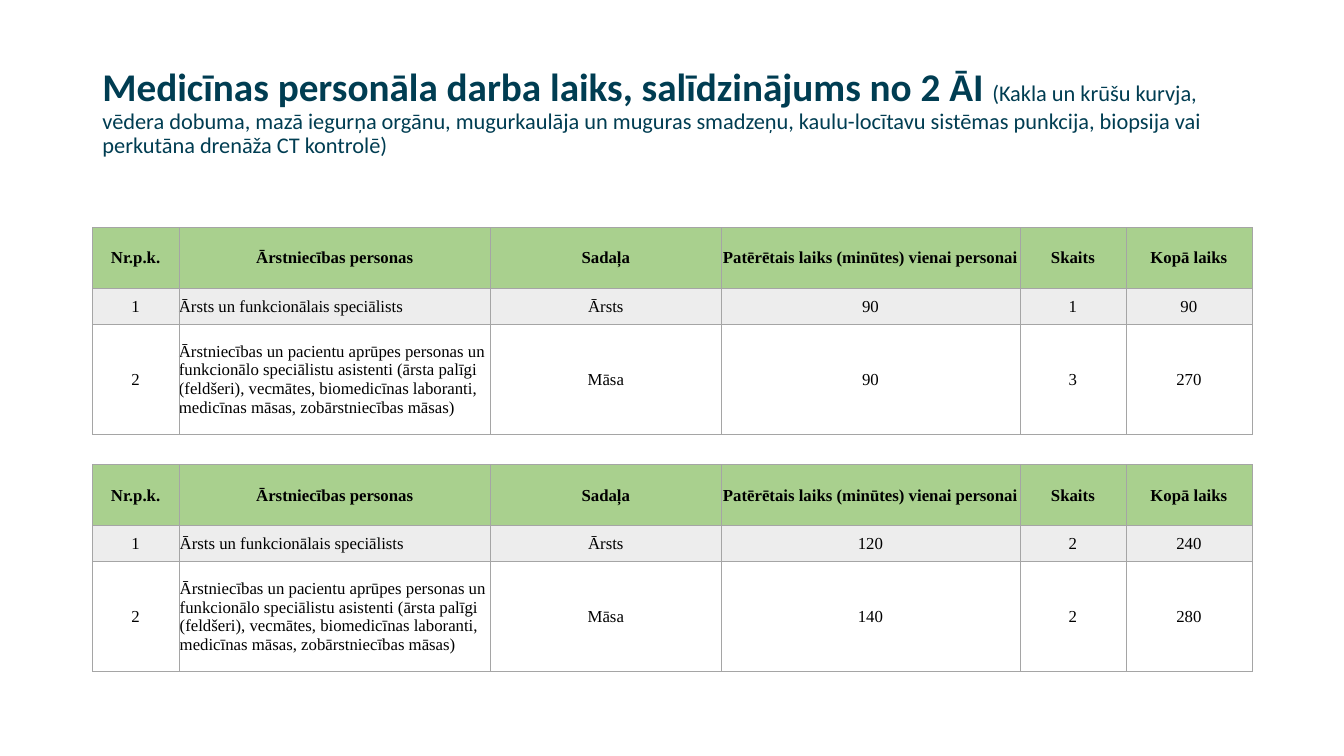
from lxml.etree import SubElement
from pptx import Presentation
from pptx.dml.color import RGBColor
from pptx.enum.text import MSO_ANCHOR as Anchor, PP_ALIGN as Align
from pptx.oxml.ns import qn
from pptx.util import Pt

NAVY = RGBColor(0x00, 0x3D, 0x52)
BLACK = RGBColor(0x00, 0x00, 0x00)
GREEN = RGBColor(0xA9, 0xD0, 0x8E)
LIGHT_GRAY = RGBColor(0xED, 0xED, 0xED)
BORDER_GRAY = RGBColor(0xA5, 0xA5, 0xA5)

HEADING = "Medicīnas personāla darba laiks, salīdzinājums no 2 ĀI "
PROCEDURE = (
    "(Kakla un krūšu kurvja, vēdera dobuma, mazā iegurņa orgānu, "
    "mugurkaulāja un muguras smadzeņu, kaulu-locītavu sistēmas punkcija, "
    "biopsija vai perkutāna drenāža CT kontrolē)"
)
COLUMNS = [
    ("Nr.p.k.", 61.8),
    ("Ārstniecības personas", 222.8),
    ("Sadaļa", 164.4),
    ("Patērētais laiks (minūtes) vienai personai", 213.6),
    ("Skaits", 75.7),
    ("Kopā laiks", 90),
]
STAFF = [
    ("Ārsts un funkcionālais speciālists", "Ārsts"),
    ("Ārstniecības un pacientu aprūpes personas un funkcionālo speciālistu "
     "asistenti (ārsta palīgi (feldšeri), vecmātes, biomedicīnas laboranti, "
     "medicīnas māsas, zobārstniecības māsas)", "Māsa"),
]
# (minutes per person, number of persons) for each staff group
INSTITUTIONS = [
    {"work": [(90, 1), (90, 3)], "inset": 0},
    {"work": [(120, 2), (140, 2)], "inset": 0.6},
]

LEFT, WIDTH = 66, 828
TABLES_TOP, TABLE_STEP = 162.4, 169.3
ROW_HEIGHTS = [43.7, 25.7, 78.6]
ROW_FILLS = [GREEN, LIGHT_GRAY, None]
PERSONS_COLUMN = 1


def style_run(run, font, size, color, bold):
    run.font.name = font
    run.font.size = Pt(size)
    run.font.color.rgb = color
    run.font.bold = bold


def add_borders(cell):
    properties = cell._tc.get_or_add_tcPr()
    for side in ("a:lnL", "a:lnR", "a:lnT", "a:lnB"):
        line = SubElement(properties, qn(side), w=str(Pt(0.5)))
        fill = SubElement(line, qn("a:solidFill"))
        SubElement(fill, qn("a:srgbClr"), val=str(BORDER_GRAY))


def fill_cell(cell, text, fill, inset, bold, align):
    add_borders(cell)
    if fill is None:
        cell.fill.background()
    else:
        cell.fill.solid()
        cell.fill.fore_color.rgb = fill
    cell.margin_left = cell.margin_right = cell.margin_top = Pt(inset)
    cell.margin_bottom = 0
    cell.vertical_anchor = Anchor.MIDDLE
    cell.text_frame.text = text
    paragraph = cell.text_frame.paragraphs[0]
    paragraph.alignment = align
    style_run(paragraph.runs[0], "Times New Roman", 12, BLACK, bold)


def add_work_table(slide, top, work, inset):
    rows = [[label for label, _ in COLUMNS]]
    for number, ((persons, section), (minutes, count)) in enumerate(zip(STAFF, work), 1):
        rows.append([number, persons, section, minutes, count, minutes * count])

    table = slide.shapes.add_table(
        len(rows), len(COLUMNS), Pt(LEFT), Pt(top), Pt(WIDTH), Pt(sum(ROW_HEIGHTS))
    ).table
    table.first_row = table.horz_banding = False
    for column, (_, width) in zip(table.columns, COLUMNS):
        column.width = Pt(width)
    for r, values in enumerate(rows):
        table.rows[r].height = Pt(ROW_HEIGHTS[r])
        for c, value in enumerate(values):
            align = Align.LEFT if r and c == PERSONS_COLUMN else Align.CENTER
            fill_cell(table.cell(r, c), str(value), ROW_FILLS[r], inset, r == 0, align)


def main():
    deck = Presentation()
    deck.slide_width, deck.slide_height = Pt(960), Pt(540)
    slide = deck.slides.add_slide(deck.slide_layouts[5])

    title = slide.shapes.title
    title.left, title.top, title.width, title.height = Pt(LEFT), Pt(28.8), Pt(WIDTH), Pt(104.4)
    title.text_frame.vertical_anchor = Anchor.MIDDLE
    title.text_frame.word_wrap = True
    paragraph = title.text_frame.paragraphs[0]
    paragraph.alignment = Align.LEFT
    paragraph.line_spacing = 0.9
    for text, size, bold in ((HEADING, 28, True), (PROCEDURE, 16, False)):
        run = paragraph.add_run()
        run.text = text
        style_run(run, "Calibri", size, NAVY, bold)

    for index, institution in enumerate(INSTITUTIONS):
        top = TABLES_TOP + index * TABLE_STEP
        add_work_table(slide, top, institution["work"], institution["inset"])

    deck.save("out.pptx")


if __name__ == "__main__":
    main()
